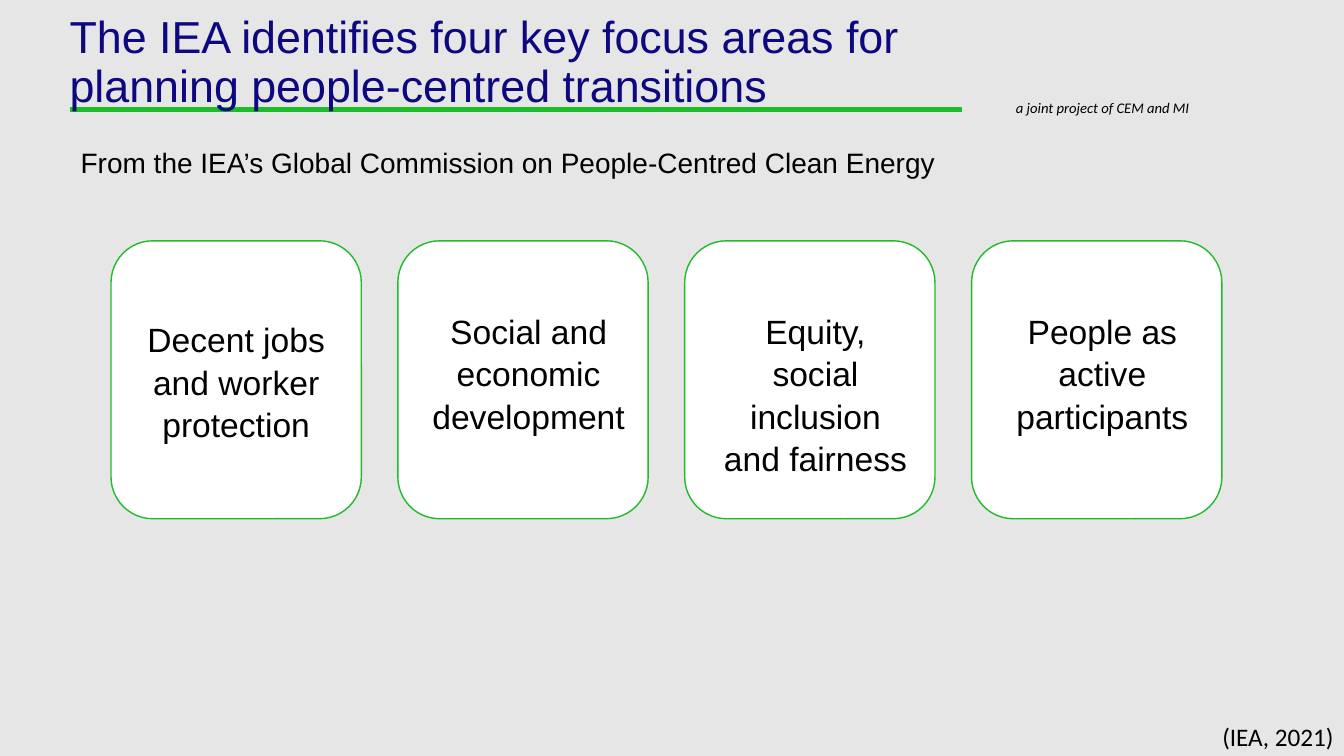
from pptx import Presentation
from pptx.dml.color import RGBColor
from pptx.enum import shapes, text
from pptx.util import Pt

COLORS = {"background": "E7E6E6", "title": "0D0780", "text": "000000",
          "bar": "1CBC2B", "card": "FFFFFF", "card_line": "1EBC2A"}
CENTER, RIGHT = text.PP_ALIGN.CENTER, text.PP_ALIGN.RIGHT


def color(name):
    return RGBColor.from_string(COLORS[name])


def write(shape, words, font, paragraph_format, insets=(7.2, 3.6, 7.2, 3.6),
          anchor=text.MSO_ANCHOR.TOP):
    """Fill a shape with one paragraph; insets run left, top, right, bottom."""
    frame = shape.text_frame
    frame.word_wrap = True
    frame.vertical_anchor = anchor
    for side, inset in zip(("left", "top", "right", "bottom"), insets):
        setattr(frame, f"margin_{side}", Pt(inset))
    paragraph = frame.paragraphs[0]
    for name, value in paragraph_format.items():
        setattr(paragraph, name, value)
    run = paragraph.add_run()
    run.text = words
    run.font.color.rgb = color("text")
    for name, value in font.items():
        if name == "color":
            run.font.color.rgb = color(value)
        else:
            setattr(run.font, name, value)


presentation = Presentation()
presentation.slide_width, presentation.slide_height = Pt(960), Pt(540)
slide = presentation.slides.add_slide(presentation.slide_layouts[6])
slide.background.fill.solid()
slide.background.fill.fore_color.rgb = color("background")

# Header bar
bar = slide.shapes.add_shape(shapes.MSO_SHAPE.RECTANGLE,
                             Pt(50.2), Pt(76.9), Pt(636.8), Pt(2.9))
bar.shadow.inherit = False
bar.fill.solid()
bar.fill.fore_color.rgb = color("bar")
bar.line.color.rgb = color("bar")
bar.line.width = Pt(0.75)

# Text boxes: position, words, font, paragraph format, frame options
flush = {"insets": (0, 0, 0, 0)}
text_boxes = [
    ((718.6, 67, 175, 20), "a joint project of CEM and MI",
     {"name": "Calibri", "size": Pt(10.5), "italic": True}, {}, {}),
    ((49.7, 10.8, 638, 69.8),
     "The IEA identifies four key focus areas for planning people-centred transitions",
     {"name": "Arial", "size": Pt(32), "color": "title"},
     {"line_spacing": 0.9}, flush),
    ((49.7, 101.5, 861, 48.2),
     "From the IEA’s Global Commission on People-Centred Clean Energy",
     {"name": "Arial", "size": Pt(20)},
     {"line_spacing": 1.1, "space_before": Pt(3), "space_after": Pt(3)},
     {"insets": (7.9, 0, 0, 0)}),
    ((665.3, 511.9, 294.5, 28.8), "(IEA, 2021)",
     {"name": "Calibri", "size": Pt(18)}, {"alignment": RIGHT},
     {"anchor": text.MSO_ANCHOR.MIDDLE}),
]
for box, words, font, paragraph_format, options in text_boxes:
    shape = slide.shapes.add_textbox(*map(Pt, box))
    write(shape, words, font, paragraph_format, **options)

# Focus area cards: words, left inset, top inset
cards = [("Decent jobs and worker protection", 7.2, 46),
         ("Social and economic development", 15.1, 40),
         ("Equity, social inclusion and fairness", 15.1, 40),
         ("People as active participants", 15.1, 40)]
for index, (words, left_inset, top_inset) in enumerate(cards):
    card = slide.shapes.add_shape(shapes.MSO_SHAPE.ROUNDED_RECTANGLE,
                                  Pt(79.3 + index * 204.9), Pt(172), Pt(178.8), Pt(198.5))
    card.shadow.inherit = False
    card.fill.solid()
    card.fill.fore_color.rgb = color("card")
    card.line.color.rgb = color("card_line")
    card.line.width = Pt(1)
    write(card, words, {"name": "Arial", "size": Pt(24)},
          {"alignment": CENTER, "line_spacing": 1.05, "space_after": Pt(6)},
          insets=(left_inset, top_inset, 7.2, 3.6))

presentation.save("out.pptx")
